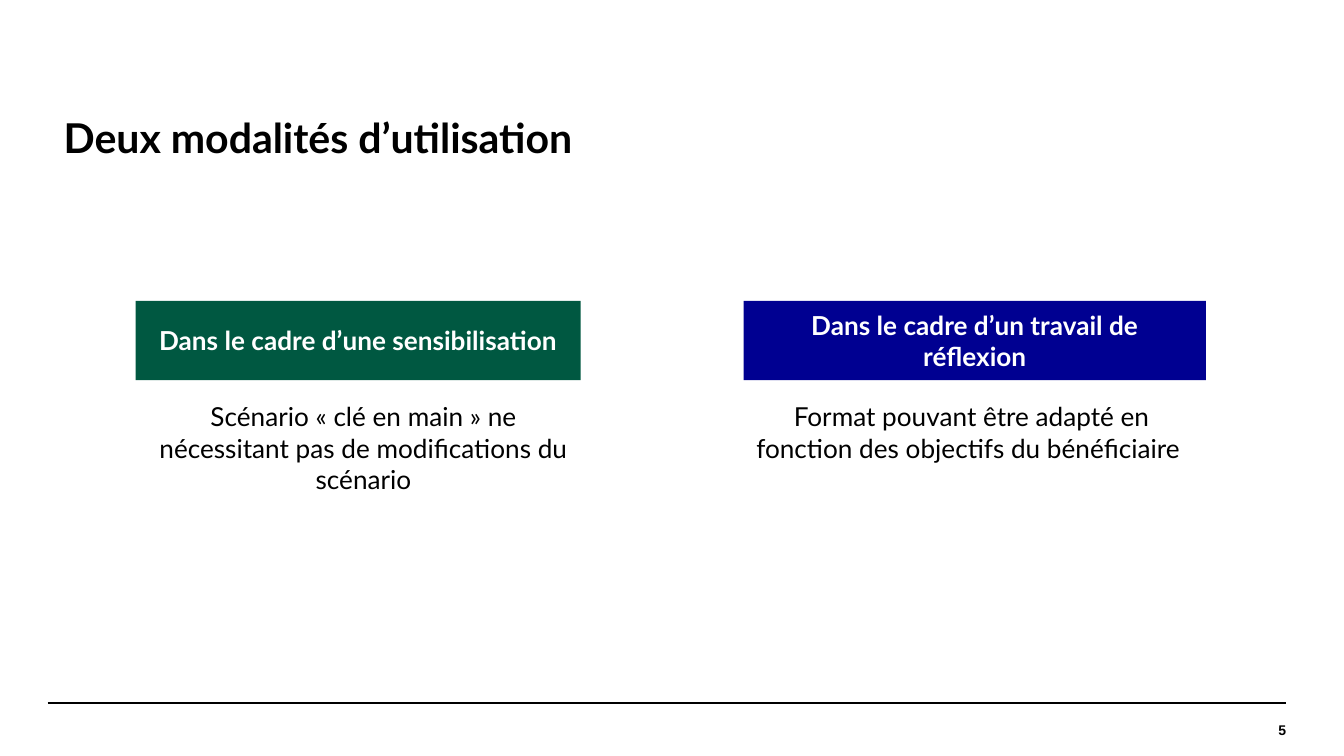
from dataclasses import dataclass

from lxml.etree import SubElement
from pptx import Presentation
from pptx.dml.color import RGBColor
from pptx.enum.shapes import MSO_CONNECTOR, MSO_SHAPE
from pptx.enum.text import MSO_ANCHOR, PP_ALIGN
from pptx.oxml.ns import qn
from pptx.util import Inches, Pt


@dataclass(frozen=True)
class Theme:
    ink: str = "000000"
    paper: str = "FFFFFF"
    green: str = "005841"
    blue: str = "000091"
    face: str = "Lato"
    foot_face: str = "Arial"
    title: float = 22
    body: float = 14
    foot: float = 7.5
    rule: float = 0.8


THEME = Theme()
WIDE = Inches(10)
HIGH = WIDE * 9 // 16

# Shares of the slide, in percent of its width or height
LEFT, RIGHT = 3.54, 95.7
BASE = 93
HEAD_TOP, HEAD_HIGH = 39.8, 10.5
NOTE_TOP, NOTE_HIGH = 52.13, 14.4


def across(share):
    return round(WIDE * share / 100)


def down(share):
    return round(HIGH * share / 100)


def area(left, top, width, height):
    return across(left), down(top), across(width), down(height)


def write(shape, words, size, color=THEME.ink, bold=False, face=THEME.face,
          align=PP_ALIGN.CENTER, anchor=MSO_ANCHOR.MIDDLE):
    frame = shape.text_frame
    frame.word_wrap = True
    frame.vertical_anchor = anchor
    para = frame.paragraphs[0]
    para.alignment = align
    run = para.add_run()
    run.text = words
    font = run.font
    font.name, font.size, font.bold = face, Pt(size), bold
    font.color.rgb = RGBColor.from_string(color)
    return frame


def add_title(slide, words):
    box = slide.shapes.add_textbox(*area(LEFT, 13.35, RIGHT - LEFT, HEAD_HIGH))
    frame = write(box, words, THEME.title, bold=True, align=PP_ALIGN.LEFT)
    frame.margin_left = Inches(0.12)
    frame.paragraphs[0].line_spacing = 0.9


def add_head(slide, left, width, words, fill):
    bar = slide.shapes.add_shape(
        MSO_SHAPE.RECTANGLE, *area(left, HEAD_TOP, width, HEAD_HIGH))
    bar.shadow.inherit = False
    bar.fill.solid()
    bar.fill.fore_color.rgb = RGBColor.from_string(fill)
    bar.line.fill.background()
    write(bar, words, THEME.body, THEME.paper, bold=True)


def add_note(slide, left, width, words):
    box = slide.shapes.add_textbox(*area(left, NOTE_TOP, width, NOTE_HIGH))
    write(box, words, THEME.body, anchor=MSO_ANCHOR.TOP)


def add_foot(slide, number):
    """Draw the bottom rule and the page number below it."""
    rule = slide.shapes.add_connector(
        MSO_CONNECTOR.STRAIGHT,
        across(LEFT), down(BASE), across(RIGHT), down(BASE))
    rule.line.color.rgb = RGBColor.from_string(THEME.ink)
    rule.line.width = Pt(THEME.rule)
    SubElement(rule._element.spPr, qn("a:effectLst"))

    width = 14.8
    box = slide.shapes.add_textbox(
        *area(RIGHT - width, BASE, width, 100 - BASE))
    frame = write(box, number, THEME.foot, bold=True, face=THEME.foot_face,
                  align=PP_ALIGN.RIGHT)
    frame.margin_left = frame.margin_right = 0
    frame.margin_top = frame.margin_bottom = 0


def main():
    deck = Presentation()
    deck.slide_width, deck.slide_height = WIDE, HIGH
    slide = deck.slides.add_slide(deck.slide_layouts[6])

    add_foot(slide, "5")
    add_title(slide, "Deux modalités d’utilisation")

    add_head(slide, 10.1, 33.1, "Dans le cadre d’une sensibilisation",
             THEME.green)
    add_head(slide, 55.33, 34.4, "Dans le cadre d’un travail de réflexion",
             THEME.blue)

    add_note(slide, 54.8, 35,
             "Format pouvant être adapté en fonction des objectifs "
             "du bénéficiaire ")
    add_note(slide, 10.1, 33.9,
             "Scénario « clé en main » ne nécessitant pas de modifications "
             "du scénario")

    deck.save("out.pptx")


if __name__ == "__main__":
    main()
